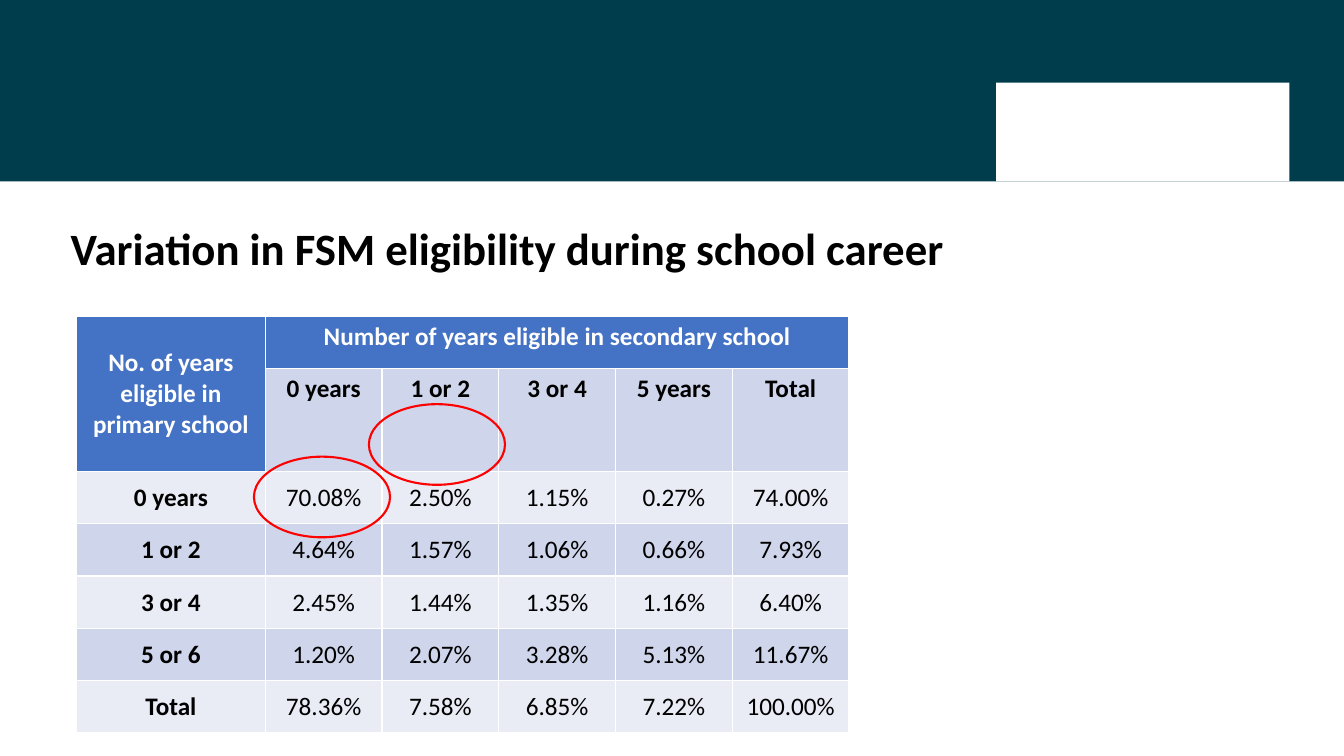
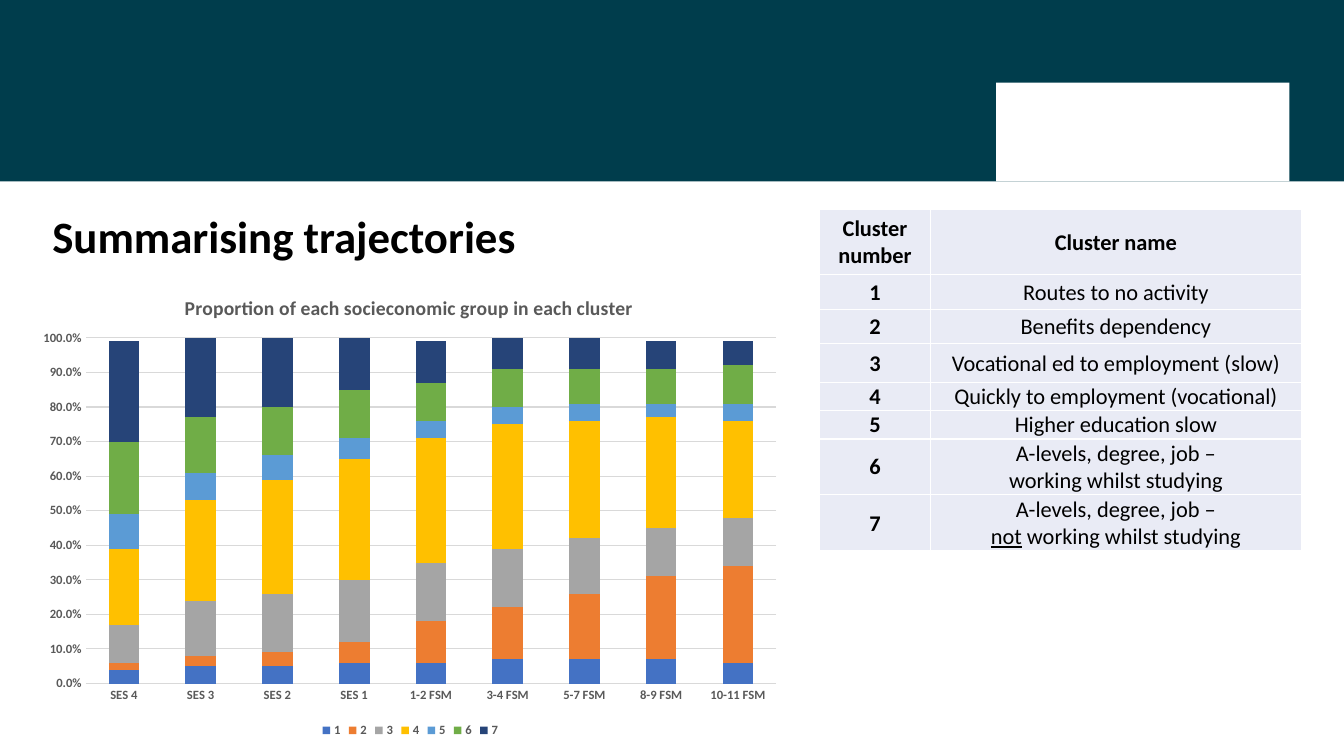
"""Build two slides on school meal eligibility and on trajectory clusters."""
from lxml import etree
from pptx import Presentation
from pptx.chart.data import CategoryChartData
from pptx.dml.color import RGBColor
from pptx.enum.chart import XL_CHART_TYPE as ChartType
from pptx.enum.chart import XL_LEGEND_POSITION as LegendPosition
from pptx.enum.chart import XL_TICK_MARK as TickMark
from pptx.enum.shapes import MSO_SHAPE as Shape
from pptx.enum.text import MSO_ANCHOR as Anchor
from pptx.enum.text import MSO_AUTO_SIZE as AutoSize
from pptx.enum.text import PP_ALIGN as Align
from pptx.oxml.ns import qn
from pptx.util import Pt

FONT = "Calibri"
BLACK, WHITE, TEAL, RED = "000000", "FFFFFF", "003D4C", "FF0000"
BLUE, DARK_ROW, LIGHT_ROW = "4472C4", "CFD5EA", "E9EBF5"
GREY, GRID = "595959", "D9D9D9"
SLIDE_SIZE = (960, 540)
BAND = (0, 0, 960, 129.6)
LOGO_BLOCK = (711.5, 59, 209.5, 70.6)

ELIGIBILITY = {
    "title": "Variation in FSM eligibility during school career",
    "title_box": (43.2, 158.4, 889.2, 50.4),
    "corner": "No. of years eligible in primary school",
    "heading": "Number of years eligible in secondary school",
    "columns": ["0 years", "1 or 2", "3 or 4", "5 years", "Total"],
    "rows": [
        ("0 years", "70.08%", "2.50%", "1.15%", "0.27%", "74.00%"),
        ("1 or 2", "4.64%", "1.57%", "1.06%", "0.66%", "7.93%"),
        ("3 or 4", "2.45%", "1.44%", "1.35%", "1.16%", "6.40%"),
        ("5 or 6", "1.20%", "2.07%", "3.28%", "5.13%", "11.67%"),
        ("Total", "78.36%", "7.58%", "6.85%", "7.22%", "100.00%"),
    ],
    "corner_at": (54.7, 226.1),
    "widths": [134.8] + [83.4] * 5,
    "heights": [37.4, 33.8] + [37.4] * 5,
    "rings": [(181.4, 326.2), (263.5, 288.7)],
    "ring_size": (97.2, 57.6),
}

CLUSTERS = {
    "title": "Summarising trajectories",
    "title_box": (30.2, 149.8, 899.3, 44.6),
    "rows": [
        (["Cluster", "number"], ["Cluster name"]),
        (["1"], ["Routes to no activity"]),
        (["2"], ["Benefits dependency"]),
        (["3"], ["Vocational ed to employment (slow)"]),
        (["4"], ["Quickly to employment (vocational)"]),
        (["5"], ["Higher education slow"]),
        (["6"], ["A-levels, degree, job –", "working whilst studying"]),
        (["7"], ["A-levels, degree, job –",
                 (("not", True), (" working whilst studying", False))]),
    ],
    "corner_at": (585.4, 149.8),
    "widths": [79.2, 265],
    "heights": [46.1, 25.2, 24.5, 27.4, 20.2, 20.2, 20.2, 40.3],
}

CHART = {
    "title": "Proportion of each socieconomic group in each cluster",
    "box": (20.2, 194.4, 545.8, 335.5),
    "title_spot": {"x": 0.2, "y": 0.04},
    "plot_spot": {"x": 0.075, "y": 0.14, "w": 0.904, "h": 0.736},
    "groups": ["SES 4", "SES 3", "SES 2", "SES 1", "1-2 FSM", "3-4 FSM",
               "5-7 FSM", "8-9 FSM", "10-11 FSM"],
    "series": [
        ("1", "4472C4", (0.04, 0.05, 0.05, 0.06, 0.06, 0.07, 0.07, 0.07, 0.06)),
        ("2", "ED7D31", (0.02, 0.03, 0.04, 0.06, 0.12, 0.15, 0.19, 0.24, 0.28)),
        ("3", "A5A5A5", (0.11, 0.16, 0.17, 0.18, 0.17, 0.17, 0.16, 0.14, 0.14)),
        ("4", "FFC000", (0.22, 0.29, 0.33, 0.35, 0.36, 0.36, 0.34, 0.32, 0.28)),
        ("5", "5B9BD5", (0.1, 0.08, 0.07, 0.06, 0.05, 0.05, 0.05, 0.04, 0.05)),
        ("6", "70AD47", (0.21, 0.16, 0.14, 0.14, 0.11, 0.11, 0.1, 0.1, 0.11)),
        ("7", "264478", (0.29, 0.24, 0.2, 0.15, 0.12, 0.1, 0.09, 0.08, 0.07)),
    ],
}


def color(value):
    return RGBColor.from_string(value)


def points(values):
    return [Pt(value) for value in values]


def style_font(font, size, shade, bold):
    font.name, font.size, font.bold = FONT, Pt(size), bold
    font.color.rgb = color(shade)


def add_plain_shape(slide, kind, box, fill=None, line=None):
    shape = slide.shapes.add_shape(kind, *points(box))
    shape.shadow.inherit = False
    if fill:
        shape.fill.solid()
        shape.fill.fore_color.rgb = color(fill)
    else:
        shape.fill.background()
    if line:
        shape.line.color.rgb = color(line)
        shape.line.width = Pt(1.5)
    else:
        shape.line.fill.background()
    return shape


def add_shared_header(slide):
    tree = slide.slide_layout.shapes.element
    for place, (box, fill) in enumerate([(BAND, TEAL), (LOGO_BLOCK, WHITE)]):
        shape = add_plain_shape(slide, Shape.RECTANGLE, box, fill)
        tree.insert(2 + place, shape.element)


def set_title(slide, content):
    title = slide.shapes.title
    title.left, title.top, title.width, title.height = points(content["title_box"])
    frame = title.text_frame
    frame.auto_size = AutoSize.NONE
    frame.word_wrap = True
    frame.vertical_anchor = Anchor.TOP
    para = frame.paragraphs[0]
    para.alignment = Align.LEFT
    para.line_spacing = 0.9
    span = para.add_run()
    span.text = content["title"]
    style_font(span.font, 32, BLACK, True)


def add_grid(slide, content):
    widths, heights = content["widths"], content["heights"]
    box = (*content["corner_at"], sum(widths), sum(heights))
    table = slide.shapes.add_table(len(heights), len(widths), *points(box)).table
    for column, width in zip(table.columns, widths):
        column.width = Pt(width)
    for row, height in zip(table.rows, heights):
        row.height = Pt(height)
    return table


def fill_cell(cell, lines, size, fill, bold, shade=BLACK, tight=True, anchor=Anchor.MIDDLE):
    cell.fill.solid()
    cell.fill.fore_color.rgb = color(fill)
    cell.vertical_anchor = anchor
    if tight:
        cell.margin_left = cell.margin_right = cell.margin_top = Pt(0.7)
        cell.margin_bottom = Pt(0)
    frame = cell.text_frame
    for index, line in enumerate(lines):
        para = frame.add_paragraph() if index else frame.paragraphs[0]
        para.alignment = Align.CENTER
        for text, underlined in [(line, False)] if isinstance(line, str) else line:
            span = para.add_run()
            span.text = text
            style_font(span.font, size, shade, bold)
            if underlined:
                span.font.underline = True


def add_eligibility_table(slide):
    content = ELIGIBILITY
    table = add_grid(slide, content)
    table.cell(0, 0).merge(table.cell(1, 0))
    table.cell(0, 1).merge(table.cell(0, len(content["columns"])))
    fill_cell(table.cell(0, 0), [content["corner"]], 18, BLUE, True, WHITE, False)
    fill_cell(table.cell(0, 1), [content["heading"]], 18, BLUE, True, WHITE, False, Anchor.TOP)
    for column, label in enumerate(content["columns"], 1):
        fill_cell(table.cell(1, column), [label], 18, DARK_ROW, True,
                  tight=False, anchor=Anchor.TOP)
    for row, values in enumerate(content["rows"], 2):
        fill = DARK_ROW if row % 2 else LIGHT_ROW
        for column, value in enumerate(values):
            fill_cell(table.cell(row, column), [value], 18, fill, column == 0)


def add_cluster_table(slide):
    table = add_grid(slide, CLUSTERS)
    table.first_row = False
    for row, cells in enumerate(CLUSTERS["rows"]):
        for column, lines in enumerate(cells):
            bold = row == 0 or column == 0
            fill_cell(table.cell(row, column), lines, 16, LIGHT_ROW, bold)


def place_part(parent, index, spot, inner=False):
    for old in parent.findall(qn("c:layout")):
        parent.remove(old)
    layout = etree.Element(qn("c:layout"))
    manual = etree.SubElement(layout, qn("c:manualLayout"))
    settings = {"layoutTarget": "inner"} if inner else {}
    settings.update({"xMode": "edge", "yMode": "edge"})
    settings.update(spot)
    for name, value in settings.items():
        etree.SubElement(manual, qn("c:" + name)).set("val", str(value))
    parent.insert(index, layout)


def add_cluster_chart(slide):
    data = CategoryChartData(number_format="0.0%")
    data.categories = CHART["groups"]
    for name, _, values in CHART["series"]:
        data.add_series(name, values)
    frame = slide.shapes.add_chart(ChartType.COLUMN_STACKED, *points(CHART["box"]), data)
    chart = frame.chart
    style_font(chart.font, 10, BLACK, False)

    chart.has_title = True
    span = chart.chart_title.text_frame.paragraphs[0].add_run()
    span.text = CHART["title"]
    style_font(span.font, 14, GREY, True)
    chart.chart_title.include_in_layout = False
    title_element = chart.chart_title.text_frame.paragraphs[0].runs[0].font
    title_element = chart.element.find(".//" + qn("c:title"))
    place_part(title_element, 1, CHART["title_spot"])
    place_part(chart.element.find(".//" + qn("c:plotArea")), 0, CHART["plot_spot"], True)

    chart.has_legend = True
    chart.legend.position = LegendPosition.BOTTOM
    chart.legend.include_in_layout = False
    style_font(chart.legend.font, 9, GREY, True)

    plot = chart.plots[0]
    plot.gap_width, plot.overlap = 150, 100
    plot.vary_by_categories = False
    for series, (_, fill, _) in zip(plot.series, CHART["series"]):
        series.format.fill.solid()
        series.format.fill.fore_color.rgb = color(fill)

    groups, shares = chart.category_axis, chart.value_axis
    for axis in (groups, shares):
        axis.major_tick_mark = axis.minor_tick_mark = TickMark.NONE
        style_font(axis.tick_labels.font, 9, GREY, True)
    shares.minimum_scale, shares.maximum_scale, shares.major_unit = 0, 1, 0.1
    shares.tick_labels.number_format = "0.0%"
    shares.tick_labels.number_format_is_linked = False
    shares.format.line.fill.background()
    for line in (groups.format.line, shares.major_gridlines.format.line):
        line.color.rgb = color(GRID)
        line.width = Pt(0.75)


def main():
    deck = Presentation()
    deck.slide_width, deck.slide_height = points(SLIDE_SIZE)
    layout = deck.slide_layouts.get_by_name("Title Only")

    page = deck.slides.add_slide(layout)
    add_shared_header(page)
    set_title(page, ELIGIBILITY)
    add_eligibility_table(page)
    for corner in ELIGIBILITY["rings"]:
        add_plain_shape(page, Shape.OVAL, (*corner, *ELIGIBILITY["ring_size"]), line=RED)

    page = deck.slides.add_slide(layout)
    set_title(page, CLUSTERS)
    add_cluster_table(page)
    add_cluster_chart(page)
    deck.save("out.pptx")


if __name__ == "__main__":
    main()
